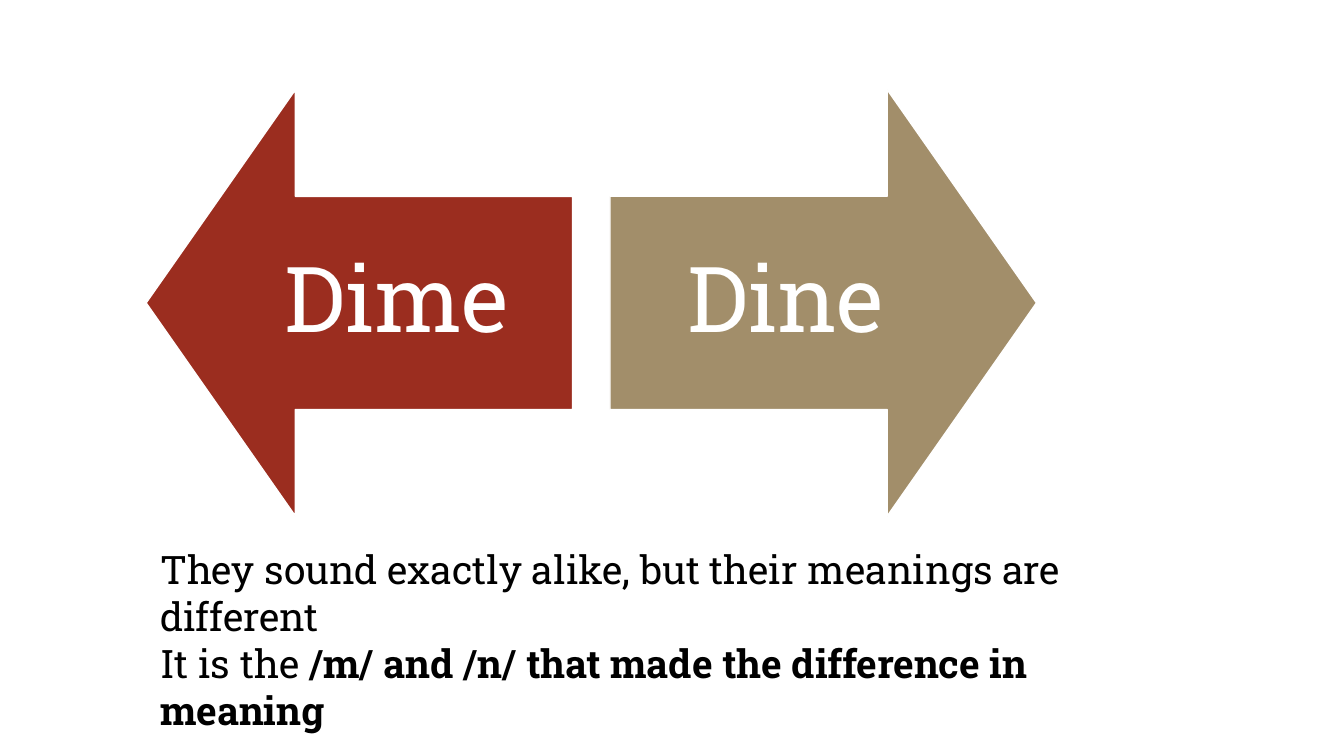
from pptx import Presentation
from pptx.dml.color import RGBColor
from pptx.enum.shapes import MSO_SHAPE
from pptx.enum.text import MSO_ANCHOR, MSO_AUTO_SIZE, PP_ALIGN
from pptx.util import Inches, Pt

ARROW = MSO_SHAPE.UP_ARROW
MIDDLE = MSO_ANCHOR.MIDDLE
CENTER = PP_ALIGN.CENTER
GROW = MSO_AUTO_SIZE.SHAPE_TO_FIT_TEXT

COLORS = {"red": "9B2D1F", "tan": "A28E6A", "white": "FFFFFF", "black": "000000"}
FONT = "Roboto Slab"
SIZE = 4.23
TOP = 0.89


def color(name):
    return RGBColor.from_string(COLORS[name])


def style(font, size, name):
    font.name = FONT
    font.size = Pt(size)
    font.color.rgb = color(name)


deck = Presentation()
deck.slide_width = Inches(13.33)
deck.slide_height = Inches(7.5)
slide = deck.slides.add_slide(deck.slide_layouts[6])

words = [
    ("Dime", "red", 270, 1.45, 2.19),
    ("Dine", "tan", 90, 6.05, 6.05),
]
for word, fill, turn, left, start in words:
    arrow = slide.shapes.add_shape(
        ARROW, Inches(left), Inches(TOP), Inches(SIZE), Inches(SIZE))
    arrow.rotation = turn
    arrow.adjustments[0] = 0.5
    arrow.adjustments[1] = 0.35
    arrow.shadow.inherit = False
    arrow.fill.solid()
    arrow.fill.fore_color.rgb = color(fill)
    arrow.line.color.rgb = color("white")
    arrow.line.width = Pt(1)

    label = slide.shapes.add_textbox(
        Inches(start), Inches(TOP + SIZE / 4), Inches(3.49), Inches(SIZE / 2))
    frame = label.text_frame
    frame.word_wrap = True
    frame.vertical_anchor = MIDDLE
    frame.margin_left = frame.margin_right = Inches(0.51)
    frame.margin_top = frame.margin_bottom = Inches(0.51)
    para = frame.paragraphs[0]
    para.text = word
    para.alignment = CENTER
    para.line_spacing = 0.9
    style(para.font, 65, "white")

note = slide.shapes.add_textbox(
    Inches(1.49), Inches(5.36), Inches(9.62), Inches(1.99))
frame = note.text_frame
frame.word_wrap = True
frame.auto_size = GROW
para = frame.paragraphs[0]
lines = [
    ("They sound exactly alike, but their meanings are different", False),
    ("It is the ", False),
    ("/m/ and /n/ that made the difference in meaning", True),
]
for index, (text, bold) in enumerate(lines):
    if index == 1:
        para.add_line_break()
    run = para.add_run()
    run.text = text
    run.font.bold = bold
    style(run.font, 28, "black")

deck.save("out.pptx")
